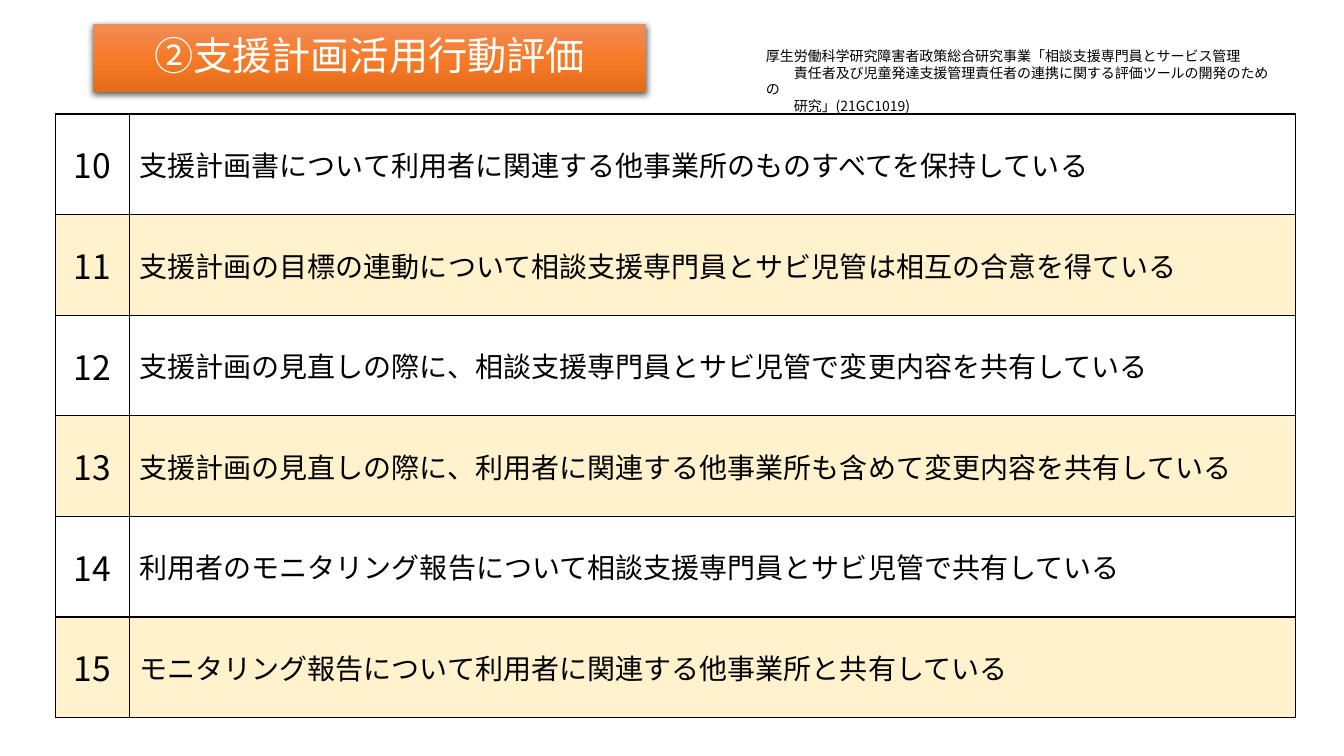
from dataclasses import dataclass
from typing import Any

from lxml.etree import SubElement
from pptx import Presentation
from pptx.dml.color import RGBColor
from pptx.enum.text import MSO_ANCHOR, MSO_AUTO_SIZE, PP_ALIGN
from pptx.oxml import parse_xml
from pptx.oxml.ns import nsdecls, qn
from pptx.util import Inches, Pt

FONT = "Noto Sans CJK JP"
BLACK, WHITE, CREAM = "000000", "FFFFFF", "FFF2CC"
SLIDE_WIDTH, SLIDE_HEIGHT = Inches(13.33), Inches(7.5)


@dataclass(frozen=True)
class Frame:
    """Position and size in percent of the slide."""
    left: float
    top: float
    width: float
    height: float

    def lengths(self) -> dict[str, int]:
        return {
            "left": across(self.left),
            "top": down(self.top),
            "width": across(self.width),
            "height": down(self.height),
        }


@dataclass(frozen=True)
class Question:
    number: int
    wording: str


@dataclass(frozen=True)
class NoteLine:
    wording: str
    indent: int = 0


TITLE_FRAME = Frame(6.9, 3.2, 41.18, 8.93)
TABLE_FRAME = Frame(4.13, 15.07, 92.25, 79.87)
NOTE_FRAME = Frame(56.25, 5.6, 39.3, 8.13)
NUMBER_WIDTH = 5.5
TITLE_STOPS = {0: "F18C57", 50: "F67B28", 100: "E56C19"}
QUESTIONS = [
    Question(number, wording)
    for number, wording in enumerate([
        "支援計画書について利用者に関連する他事業所のものすべてを保持している",
        "支援計画の目標の連動について相談支援専門員とサビ児管は相互の合意を得ている",
        "支援計画の見直しの際に、相談支援専門員とサビ児管で変更内容を共有している",
        "支援計画の見直しの際に、利用者に関連する他事業所も含めて変更内容を共有している",
        "利用者のモニタリング報告について相談支援専門員とサビ児管で共有している",
        "モニタリング報告について利用者に関連する他事業所と共有している",
    ], start=10)
]
NOTE_LINES = [
    NoteLine("厚生労働科学研究障害者政策総合研究事業「相談支援専門員とサービス管理"),
    NoteLine("責任者及び児童発達支援管理責任者の連携に関する評価ツールの開発のための", 2),
    NoteLine("研究」(21GC1019)", 2),
]


def across(percent: float) -> int:
    return round(SLIDE_WIDTH * percent / 100)


def down(percent: float) -> int:
    return round(SLIDE_HEIGHT * percent / 100)


def colour(value: str) -> RGBColor:
    return RGBColor.from_string(value)


def apply(target: Any, values: dict[str, Any]) -> None:
    for name, value in values.items():
        setattr(target, name, value)


def write(para: Any, wording: str, size: int, ink: str = BLACK, **layout: Any) -> None:
    apply(para, layout)
    span = para.add_run()
    span.text = wording
    apply(span.font, {"name": FONT, "size": Pt(size)})
    span.font.color.rgb = colour(ink)
    SubElement(span.font._element, qn("a:ea"), typeface=FONT)


def draw_title(page: Any) -> None:
    title = page.shapes.title
    apply(title, TITLE_FRAME.lengths())
    stops = "".join(
        f'<a:gs pos="{position * 1000}"><a:srgbClr val="{value}"/></a:gs>'
        for position, value in TITLE_STOPS.items()
    )
    for markup in (
        f'<a:prstGeom {nsdecls("a")} prst="rect"><a:avLst/></a:prstGeom>',
        f'<a:gradFill {nsdecls("a")} rotWithShape="1"><a:gsLst>{stops}</a:gsLst>'
        '<a:lin ang="5400000" scaled="0"/></a:gradFill>',
        f'<a:effectLst {nsdecls("a")}><a:outerShdw blurRad="{Pt(4.5)}" dist="{Pt(1.5)}" '
        f'dir="5400000" algn="ctr" rotWithShape="0"><a:srgbClr val="{BLACK}">'
        '<a:alpha val="63000"/></a:srgbClr></a:outerShdw></a:effectLst>',
    ):
        title._element.spPr.append(parse_xml(markup))
    apply(title.text_frame, {
        "vertical_anchor": MSO_ANCHOR.MIDDLE,
        "auto_size": MSO_AUTO_SIZE.NONE,
        "word_wrap": True,
    })
    write(title.text_frame.paragraphs[0], "②支援計画活用行動評価", 28, WHITE,
          alignment=PP_ALIGN.CENTER, line_spacing=0.9)


def draw_borders(cell: Any) -> None:
    properties = cell._tc.get_or_add_tcPr()
    for side in ("lnL", "lnR", "lnT", "lnB"):
        border = SubElement(properties, qn(f"a:{side}"), w=str(Pt(1)))
        SubElement(SubElement(border, qn("a:solidFill")), qn("a:srgbClr"), val=BLACK)


def draw_cell(cell: Any, wording: str, size: int, fill: str, alignment: Any) -> None:
    draw_borders(cell)
    cell.fill.solid()
    cell.fill.fore_color.rgb = colour(fill)
    cell.vertical_anchor = MSO_ANCHOR.MIDDLE
    write(cell.text_frame.paragraphs[0], wording, size, alignment=alignment)


def draw_questions(page: Any) -> None:
    table = page.shapes.add_table(len(QUESTIONS), 2, **TABLE_FRAME.lengths()).table
    apply(table, {"first_row": False, "horz_banding": False})
    for column, width in zip(table.columns, (NUMBER_WIDTH, TABLE_FRAME.width - NUMBER_WIDTH)):
        column.width = across(width)
    for row, question in enumerate(QUESTIONS):
        table.rows[row].height = down(TABLE_FRAME.height / len(QUESTIONS))
        fill = CREAM if row % 2 else WHITE
        draw_cell(table.cell(row, 0), str(question.number), 24, fill, PP_ALIGN.CENTER)
        draw_cell(table.cell(row, 1), question.wording, 20, fill, PP_ALIGN.LEFT)


def draw_note(page: Any) -> None:
    size = 10
    frame = page.shapes.add_textbox(**NOTE_FRAME.lengths()).text_frame
    apply(frame, {"word_wrap": True, "auto_size": MSO_AUTO_SIZE.SHAPE_TO_FIT_TEXT})
    for index, line in enumerate(NOTE_LINES):
        para = frame.add_paragraph() if index else frame.paragraphs[0]
        write(para, line.wording, size)
        apply_indent = para._p.get_or_add_pPr().set
        apply_indent("marL", "0")
        apply_indent("indent", str(Pt(size * line.indent)))


def main() -> None:
    deck = Presentation()
    apply(deck, {"slide_width": SLIDE_WIDTH, "slide_height": SLIDE_HEIGHT})
    page = deck.slides.add_slide(deck.slide_layouts[5])
    draw_title(page)
    draw_questions(page)
    draw_note(page)
    deck.save("out.pptx")


if __name__ == "__main__":
    main()
